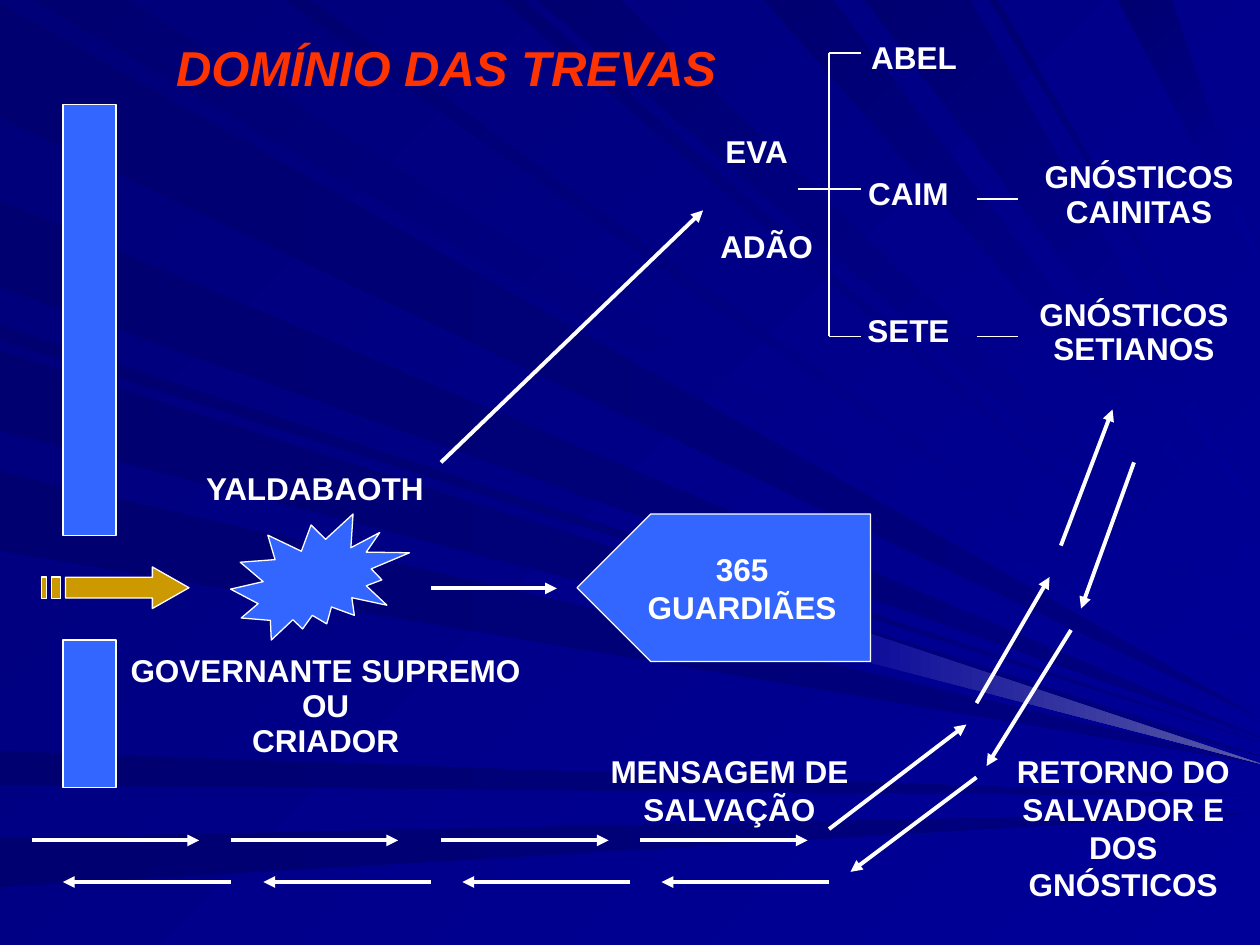
"""Build the "Domínio das Trevas" diagram slide."""
from typing import NamedTuple

from lxml.etree import SubElement
from pptx import Presentation
from pptx.dml.color import RGBColor
from pptx.dml.fill import FillFormat
from pptx.enum.shapes import MSO_CONNECTOR, MSO_SHAPE as Preset
from pptx.enum.text import MSO_ANCHOR, MSO_AUTO_SIZE, PP_ALIGN
from pptx.oxml.ns import qn
from pptx.shapes.autoshape import Shape
from pptx.slide import Slide
from pptx.text.text import TextFrame
from pptx.util import Inches, Pt

WHITE = RGBColor.from_string("FFFFFF")
BLUE = RGBColor.from_string("3366FF")
GOLD = RGBColor.from_string("CC9900")
RED = RGBColor.from_string("FF3300")
NIGHT = RGBColor.from_string("000070")
NAVY = RGBColor.from_string("000078")
DEEP = RGBColor.from_string("000080")
ROYAL = RGBColor.from_string("000099")
HAZE = RGBColor.from_string("5A5AA6")

Point = tuple[float, float]


class Ray(NamedTuple):
    base_start: float
    base_end: float
    tip: float


class Label(NamedTuple):
    text: str
    left: float
    top: float
    width: float
    height: float = 0.4
    size: int = 18
    color: RGBColor = WHITE
    italic: bool = False


class Block(NamedTuple):
    preset: Preset
    left: float
    top: float
    width: float
    height: float
    color: RGBColor = BLUE


LEFT_RAYS = [
    Ray(0.02, 0.93, 5.7), Ray(1.59, 2.28, 5.85), Ray(2.58, 2.7, 5.89),
    Ray(2.78, 3.42, 6), Ray(3.74, 4.37, 6.06), Ray(5.96, 6.23, 6.32), Ray(6.65, 7.04, 6.45),
]
TOP_RAYS = [
    Ray(0.26, 1.01, 5.63), Ray(2.25, 2.47, 5.5), Ray(3.98, 4.16, 5.18), Ray(4.26, 4.92, 4.93),
    Ray(6.06, 6.61, 4.46), Ray(6.86, 7.7, 4.1), Ray(7.85, 7.92, 3.57), Ray(8.87, 9.3, 2.1),
]
HAZE_RAY = [(6.37, 4.85), (6.33, 5.11), (10, 6.06)]
BLOCKS = [
    Block(Preset.RECTANGLE, 0.5, 0.83, 0.42, 3.42),
    Block(Preset.RECTANGLE, 0.5, 5.08, 0.42, 1.17),
    Block(Preset.EXPLOSION2, 1.83, 4.08, 1.42, 1),
    Block(Preset.RECTANGLE, 0.33, 4.58, 0.04, 0.17, GOLD),
    Block(Preset.RECTANGLE, 0.41, 4.58, 0.07, 0.17, GOLD),
]
ENTRY_ARROW = Block(Preset.RIGHT_ARROW, 0.52, 4.5, 0.98, 0.33, GOLD)
GUARDIANS = Block(Preset.PENTAGON, 4.58, 4.08, 2.33, 1.17)
LABELS = [
    Label("YALDABAOTH", 1.5, 3.67, 2),
    Label("GOVERNANTE SUPREMO\nOU\nCRIADOR", 0.67, 5.25, 3.83, 0.86),
    Label("EVA", 5.42, 1, 1.17),
    Label("ADÃO", 5.5, 1.75, 1.17),
    Label("ABEL", 6.42, 0.25, 1.67),
    Label("CAIM", 6.42, 1.33, 1.58),
    Label("SETE", 6.5, 2.42, 1.42),
    Label("GNÓSTICOS\nSETIANOS", 8, 2.42, 2, 0.55),
    Label("GNÓSTICOS\nCAINITAS", 8.08, 1.33, 1.92, 0.55),
    Label("MENSAGEM DE SALVAÇÃO", 4.58, 5.92, 2.42, 0.7),
    Label("RETORNO DO SALVADOR E DOS GNÓSTICOS", 7.83, 5.92, 2.17, 1.3),
    Label("DOMÍNIO DAS TREVAS", 1.25, 0.25, 4.58, 0.57, 28, RED, True),
]
FAMILY_LINES = [((6.58, 0.42), (6.58, 2.67)), ((6.33, 1.5), (6.58, 1.5))]
FAMILY_LINES += [((6.58, y), (6.83, y)) for y in (0.42, 1.5, 2.67)]
FAMILY_LINES += [((7.75, y), (8.08, y)) for y in (1.58, 2.67)]
ARROWS = [
    ((3.42, 4.67), (4.42, 4.67)), ((3.5, 3.67), (5.58, 1.67)),
    ((6.58, 6.58), (7.67, 5.75)), ((7.75, 5.58), (8.33, 4.58)), ((8.42, 4.33), (8.83, 3.25)),
    ((9, 3.67), (8.58, 4.83)), ((8.5, 5), (7.83, 6.08)), ((7.75, 6.17), (6.75, 6.92)),
]
ARROWS += [((x, 6.67), (x + 1.33, 6.67)) for x in (0.25, 1.83, 3.5, 5.08)]
ARROWS += [((x, 7), (x - 1.33, 7)) for x in (1.83, 3.42, 5, 6.58)]


def fill_gradient(fill: FillFormat, start: RGBColor, end: RGBColor, angle: int) -> None:
    fill.gradient()
    fill.gradient_angle = 360 - angle
    for stop, color in zip(fill.gradient_stops, (start, end)):
        stop.color.rgb = color


def style_shape(shape: Shape, color: RGBColor) -> None:
    shape.shadow.inherit = False
    shape.fill.solid()
    shape.fill.fore_color.rgb = color
    shape.line.color.rgb = WHITE
    shape.line.width = Pt(0.75)


def draw_ray(slide: Slide, outline: list[Point], start: RGBColor, end: RGBColor, angle: int) -> None:
    points = [(Inches(x), Inches(y)) for x, y in outline]
    builder = slide.shapes.build_freeform(*points[0])
    builder.add_line_segments(points[1:])
    shape = builder.convert_to_shape()
    shape.shadow.inherit = False
    shape.line.fill.background()
    fill_gradient(shape.fill, start, end, angle)


def draw_block(slide: Slide, block: Block) -> Shape:
    shape = slide.shapes.add_shape(block.preset, *map(Inches, block[1:5]))
    style_shape(shape, block.color)
    return shape


def set_text(frame: TextFrame, text: str, size: int, color: RGBColor, italic: bool) -> None:
    frame.text = text
    for paragraph in frame.paragraphs:
        paragraph.alignment = PP_ALIGN.CENTER
        font = paragraph.runs[0].font
        font.name, font.size, font.bold, font.italic = "Arial", Pt(size), True, italic
        font.color.rgb = color


def draw_label(slide: Slide, label: Label) -> None:
    frame = slide.shapes.add_textbox(*map(Inches, label[1:5])).text_frame
    frame.word_wrap = True
    frame.auto_size = MSO_AUTO_SIZE.SHAPE_TO_FIT_TEXT
    set_text(frame, label.text, label.size, label.color, label.italic)
    if len(frame.paragraphs) > 1:
        for index, paragraph in enumerate(frame.paragraphs):
            paragraph.line_spacing = 0.5
            paragraph.space_before = Pt(9 if index else 0)


def draw_line(slide: Slide, start: Point, end: Point, width: float, arrow: bool) -> None:
    ends = map(Inches, (*start, *end))
    connector = slide.shapes.add_connector(MSO_CONNECTOR.STRAIGHT, *ends)
    connector.line.color.rgb = WHITE
    connector.line.width = Pt(width)
    if arrow:
        SubElement(connector.element.spPr.find(qn("a:ln")), qn("a:tailEnd"), type="triangle")
    SubElement(connector.element.spPr, qn("a:effectLst"))


def draw_background(slide: Slide) -> None:
    fill_gradient(slide.background.fill, NAVY, ROYAL, 45)
    for ray in LEFT_RAYS:
        outline = [(0, ray.base_start), (0, ray.base_end), (10, ray.tip)]
        draw_ray(slide, outline, NIGHT, DEEP, 0)
    for ray in TOP_RAYS:
        outline = [(ray.base_start, 0), (ray.base_end, 0), (10, ray.tip)]
        draw_ray(slide, outline, NIGHT, ROYAL, 45)
    draw_ray(slide, HAZE_RAY, ROYAL, HAZE, 0)


def draw_guardians(slide: Slide) -> None:
    shape = draw_block(slide, GUARDIANS)
    shape.adjustments[0] = 0.5
    shape.element.spPr.xfrm.set("flipH", "1")
    shape.text_frame.word_wrap = False
    shape.text_frame.vertical_anchor = MSO_ANCHOR.MIDDLE
    set_text(shape.text_frame, "365\nGUARDIÃES", 18, WHITE, False)


def main() -> None:
    presentation = Presentation()
    presentation.slide_width, presentation.slide_height = Inches(10), Inches(7.5)
    slide = presentation.slides.add_slide(presentation.slide_layouts[6])
    draw_background(slide)
    for block in BLOCKS:
        draw_block(slide, block)
    draw_block(slide, ENTRY_ARROW).adjustments[1] = 0.88
    draw_guardians(slide)
    for start, end in FAMILY_LINES:
        draw_line(slide, start, end, 0.75, False)
    for start, end in ARROWS:
        draw_line(slide, start, end, 2.25, True)
    for label in LABELS:
        draw_label(slide, label)
    presentation.save("out.pptx")


if __name__ == "__main__":
    main()
